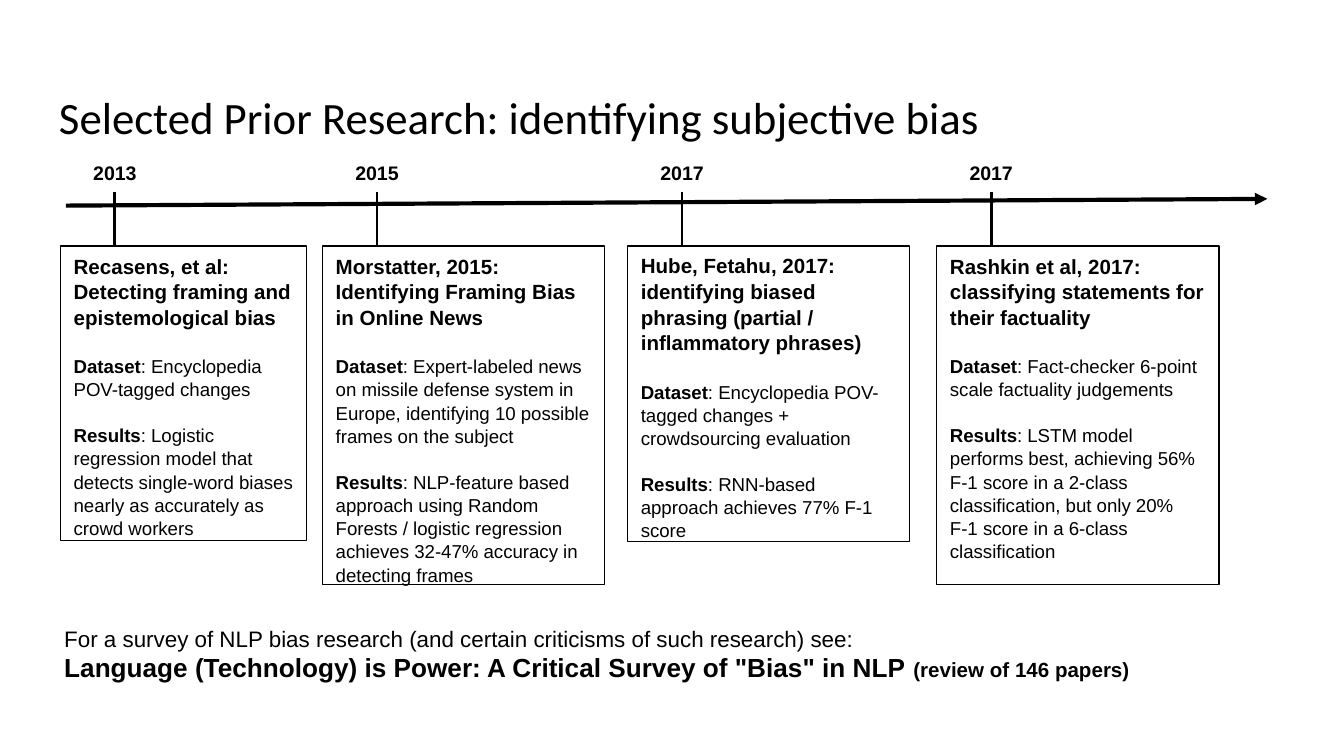
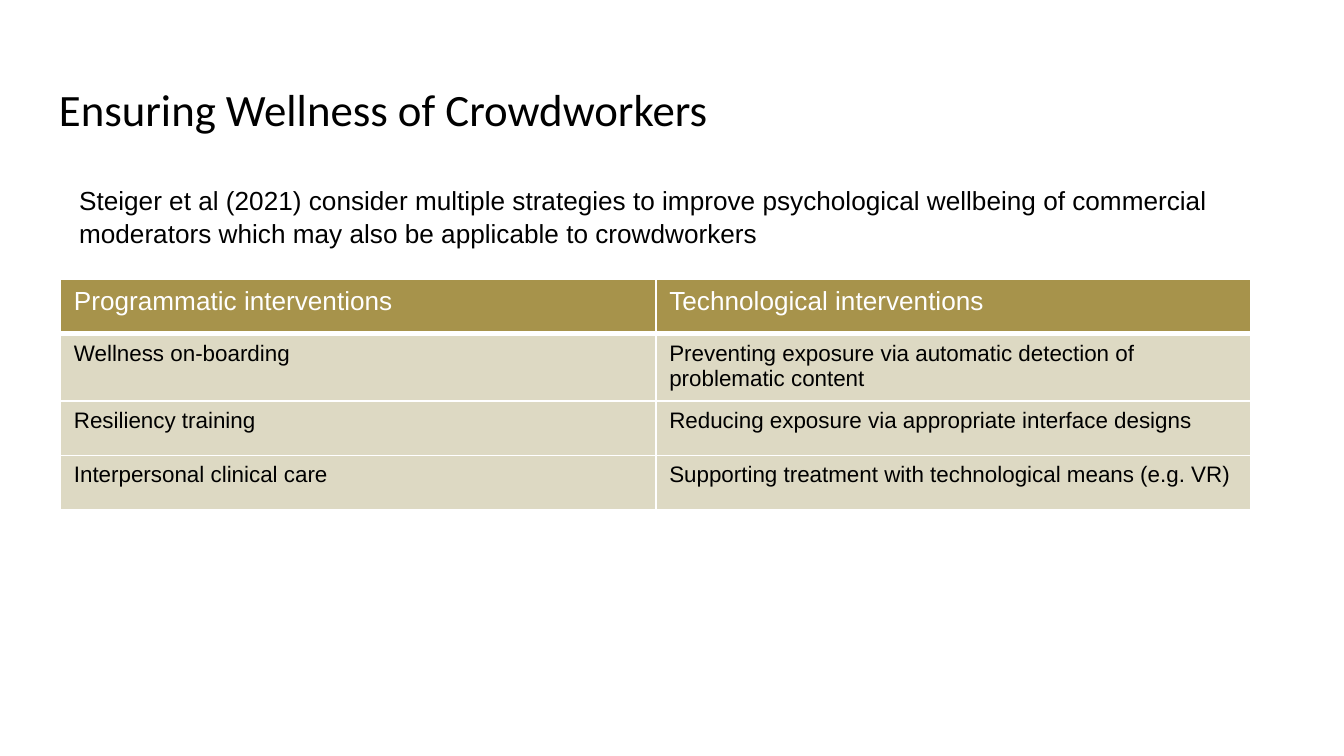
import pptx
import pptx.util
import pptx.dml.color
import pptx.enum.shapes
import pptx.enum.text
import pptx.oxml
import pptx.oxml.ns
from lxml import etree

COLORS = {"ink": "000000", "paper": "FFFFFF", "gold": "A7934B", "sand": "DDD9C3"}
ANCHOR = pptx.enum.text.MSO_ANCHOR
ALIGN = pptx.enum.text.PP_ALIGN
SHAPE = pptx.enum.shapes.MSO_SHAPE
COLUMNS, ROWS = 100, 56.25

STUDIES = [
    (4.5, 18.3, 21.9, "2013",
     "Recasens, et al: Detecting framing and epistemological bias",
     "Encyclopedia POV-tagged changes",
     "Logistic regression model that detects single-word biases nearly as accurately as "
     "crowd workers"),
    (24, 21, 25.2, "2015",
     "Morstatter, 2015: Identifying Framing Bias in Online News",
     "Expert-labeled news on missile defense system in Europe, identifying 10 possible "
     "frames on the subject",
     "NLP-feature based approach using Random Forests / logistic regression achieves "
     "32-47% accuracy in detecting frames"),
    (46.7, 21, 22, "2017",
     "Hube, Fetahu, 2017: identifying biased phrasing (partial / inflammatory phrases)",
     "Encyclopedia POV-tagged changes + crowdsourcing evaluation",
     "RNN-based approach achieves 77% F-1 score"),
    (69.7, 21, 25.2, "2017",
     "Rashkin et al, 2017: classifying statements for their factuality",
     "Fact-checker 6-point scale factuality judgements",
     "LSTM model performs best, achieving 56% F-1 score in a 2-class classification, "
     "but only 20% F-1 score in a 6-class classification"),
]

INTERVENTIONS = [
    ("Programmatic interventions", "Technological interventions"),
    ("Wellness on-boarding",
     "Preventing exposure via automatic detection of problematic content"),
    ("Resiliency training", "Reducing exposure via appropriate interface designs"),
    ("Interpersonal clinical care",
     "Supporting treatment with technological means (e.g. VR)"),
]


def rgb(name):
    """Return the named colour."""
    return pptx.dml.color.RGBColor.from_string(COLORS[name])


def write(tf, paragraphs, size=12, bold=False, font="Arial", color="ink",
          align=ALIGN.LEFT, gaps=(), spacing=None, indent=0):
    """Fill a frame with a string or with paragraphs of (text, format) runs."""
    if isinstance(paragraphs, str):
        paragraphs = [[(paragraphs, {})]]
    for i, runs in enumerate(paragraphs):
        p = tf.paragraphs[0] if i == 0 else tf.add_paragraph()
        p.alignment = align
        if indent:
            p._p.get_or_add_pPr().set("marL", str(pptx.util.Inches(indent)))
        if spacing:
            p.line_spacing = spacing
        if i and gaps:
            p.space_before = pptx.util.Pt(gaps[i - 1])
        for text, style in runs:
            if text == "\n":
                p.add_line_break()
                continue
            r = p.add_run()
            r.text = text
            r.font.name = font
            r.font.size = pptx.util.Pt(style.get("size", size))
            r.font.bold = style.get("bold", bold)
            r.font.color.rgb = rgb(color)


class Deck:
    """Hold the style and the current slide, measured in grid columns and rows."""

    def __init__(self):
        """Start a widescreen presentation."""
        self.prs = pptx.Presentation()
        self.prs.slide_width = pptx.util.Inches(10)
        self.prs.slide_height = pptx.util.Inches(5.625)
        self.s = None

    def x(self, columns):
        """Convert columns to a length."""
        return round(self.prs.slide_width * columns / COLUMNS)

    def y(self, rows):
        """Convert rows to a length."""
        return round(self.prs.slide_height * rows / ROWS)

    def box(self, left, top, width, height):
        """Convert a grid box to lengths."""
        return self.x(left), self.y(top), self.x(width), self.y(height)

    def slide(self, title, anchor):
        """Add a slide with the shared title."""
        self.s = self.prs.slides.add_slide(self.prs.slide_layouts[6])
        self.text(3.4, 4.9, 93.2, 6.3, title, anchor=anchor, size=24, font="Calibri")

    def text(self, left, top, width, height, content, anchor=ANCHOR.TOP, pad=0.05, **style):
        """Add a wrapped text box."""
        tf = self.s.shapes.add_textbox(*self.box(left, top, width, height)).text_frame
        tf.word_wrap = True
        tf.vertical_anchor = anchor
        tf.margin_top = tf.margin_bottom = pptx.util.Inches(pad)
        write(tf, content, **style)

    def card(self, left, top, width, height, content, **style):
        """Add an outlined rectangle with text."""
        sp = self.s.shapes.add_shape(SHAPE.RECTANGLE, *self.box(left, top, width, height))
        sp.shadow.inherit = False
        sp.fill.background()
        sp.line.color.rgb = rgb("ink")
        sp.line.width = pptx.util.Pt(0.75)
        tf = sp.text_frame
        tf.word_wrap = True
        tf.vertical_anchor = ANCHOR.TOP
        write(tf, content, **style)

    def line(self, x1, y1, x2, y2, weight, arrow=False):
        """Add a straight line, with an optional arrowhead at its end."""
        c = self.s.shapes.add_connector(
            pptx.enum.shapes.MSO_CONNECTOR.STRAIGHT,
            self.x(x1), self.y(y1), self.x(x2), self.y(y2))
        c.line.color.rgb = rgb("ink")
        c.line.width = pptx.util.Pt(weight)
        if arrow:
            ln = c.line._get_or_add_ln()
            etree.SubElement(ln, pptx.oxml.ns.qn("a:tailEnd"), type="triangle")
        etree.SubElement(c._element.spPr, pptx.oxml.ns.qn("a:effectLst"))

    def border(self, cell, side, weight):
        """Draw one white cell border."""
        qn = pptx.oxml.ns.qn
        ln = etree.SubElement(cell._tc.get_or_add_tcPr(), qn("a:ln" + side),
                              w=str(pptx.util.Pt(weight)))
        fill = etree.SubElement(ln, qn("a:solidFill"))
        etree.SubElement(fill, qn("a:srgbClr"), val=COLORS["paper"])

    def table(self, left, top, width, row_height, rows):
        """Add a table with a gold header over sand rows."""
        box = self.box(left, top, width, row_height * len(rows))
        table = self.s.shapes.add_table(len(rows), len(rows[0]), *box).table
        for i, row in enumerate(rows):
            header = i == 0
            table.rows[i].height = self.y(row_height)
            for j, value in enumerate(row):
                cell = table.cell(i, j)
                for side in "LRTB":
                    self.border(cell, side, 3 if header and side == "B" else 1)
                cell.fill.solid()
                cell.fill.fore_color.rgb = rgb("gold" if header else "sand")
                write(cell.text_frame, value, size=14 if header else 12,
                      color="paper" if header else "ink")


def research_slide(deck):
    """Build the timeline of prior research."""
    deck.slide("Selected Prior Research: identifying subjective bias", ANCHOR.BOTTOM)
    deck.line(4.9, 15.3, 94.3, 14.8, 2.25, arrow=True)
    for left, width, height, year, heading, dataset, results in STUDIES:
        tick = left + 4.05
        deck.line(tick, 14.3, tick, 18.4, 1.5)
        content = [[(heading, {"size": 11, "bold": True})]]
        for label, detail in (("Dataset", dataset), ("Results", results)):
            content.append([(label, {"bold": True}), (": " + detail, {})])
        deck.card(left, 18.3, width, height, content, size=10, gaps=(13.2, 12), spacing=1.04)
        deck.text(tick - 3.35, 11.5, 6.7, 2.9, year, size=10.5, bold=True,
                  align=ALIGN.CENTER)
    deck.text(3.8, 46, 87.3, 5.4, [[
        ("For a survey of NLP bias research (and certain criticisms of such research) see: ",
         {"size": 12, "bold": False}),
        ("\n", {}),
        ('Language (Technology) is Power: A Critical Survey of "Bias" in NLP ', {"size": 14}),
        ("(review of 146 papers)", {"size": 11}),
    ]], bold=True)


def wellness_slide(deck):
    """Build the table of wellness interventions."""
    deck.slide("Ensuring Wellness of Crowdworkers", ANCHOR.MIDDLE)
    deck.text(3.4, 12.6, 93.2, 6.8,
              "Steiger et al (2021) consider multiple strategies to improve psychological "
              "wellbeing of commercial moderators which may also be applicable to crowdworkers",
              pad=0.1, size=14, indent=0.15, spacing=1.06)
    deck.table(4.5, 20.8, 88.6, 4.05, INTERVENTIONS)


def main():
    """Build and save the deck."""
    deck = Deck()
    research_slide(deck)
    wellness_slide(deck)
    deck.prs.save("out.pptx")


if __name__ == "__main__":
    main()
